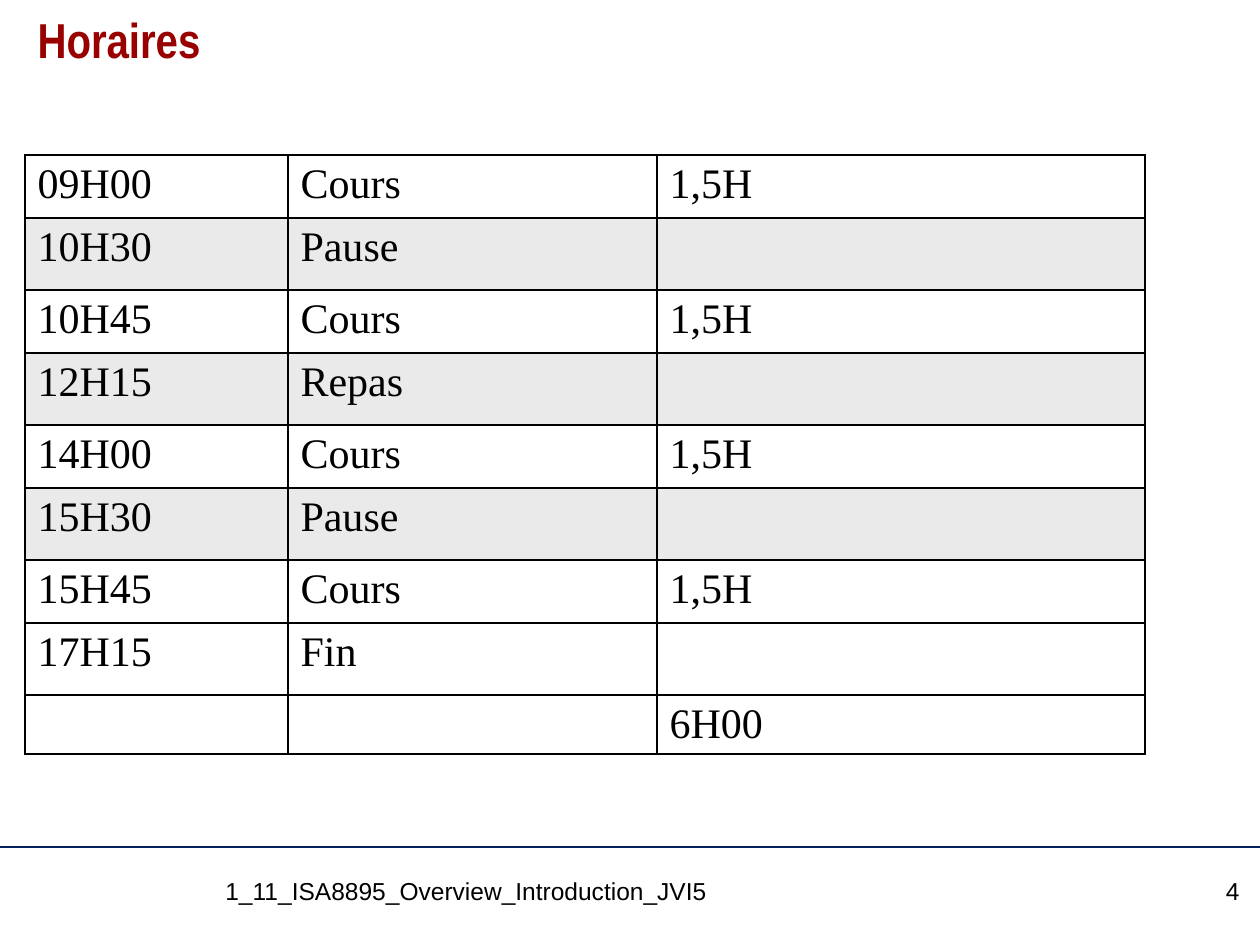
"""Build the course timetable slide."""
from lxml import etree
from pptx import Presentation
from pptx import util as u
from pptx.dml.color import RGBColor
from pptx.enum import shapes, text
from pptx.oxml.ns import qn

BLACK = RGBColor(0x00, 0x00, 0x00)
RED = RGBColor(0x99, 0x00, 0x00)
NAVY = RGBColor(0x00, 0x20, 0x60)
GREY = RGBColor(0xEA, 0xEA, 0xEA)

BREAKS = ("Pause", "Repas")
SCHEDULE = [
    ("09H00", "Cours", "1,5H"),
    ("10H30", "Pause", ""),
    ("10H45", "Cours", "1,5H"),
    ("12H15", "Repas", ""),
    ("14H00", "Cours", "1,5H"),
    ("15H30", "Pause", ""),
    ("15H45", "Cours", "1,5H"),
    ("17H15", "Fin", ""),
    ("", "", "6H00"),
]
COLUMN_WIDTHS = [263, 369, 488]
ROW_HEIGHTS = [63, 72] * 4 + [59]


def px(length):
    """Turn pixels into EMU at 126 pixels to the inch."""
    return u.Emu(round(length * 914400 / 126))


def write(frame, content, font="Arial", size=14, color=BLACK, bold=False,
          align=text.PP_ALIGN.LEFT, spacing=1.0):
    """Write one formatted paragraph into a text frame."""
    paragraph = frame.paragraphs[0]
    paragraph.alignment = align
    paragraph.line_spacing = spacing
    run = paragraph.add_run()
    run.text = content
    run.font.name = font
    run.font.size = u.Pt(size)
    run.font.bold = bold
    run.font.color.rgb = color


class SlideBuilder:
    """Hold the style and the current slide."""

    table_font = "Times New Roman"
    title_font = "Arial Narrow"

    def __init__(self, presentation):
        """Add a slide with a title placeholder."""
        self.slide = presentation.slides.add_slide(presentation.slide_layouts[5])

    def title(self, content, left, top, width, height):
        """Place and fill the title."""
        shape = self.slide.shapes.title
        shape.left, shape.top = px(left), px(top)
        shape.width, shape.height = px(width), px(height)
        frame = shape.text_frame
        frame.auto_size = text.MSO_AUTO_SIZE.NONE
        frame.vertical_anchor = text.MSO_ANCHOR.TOP
        write(frame, content, font=self.title_font, size=28, color=RED,
              bold=True, spacing=0.9)

    def rule(self, left, right, top):
        """Draw a thin horizontal line."""
        line = self.slide.shapes.add_connector(
            shapes.MSO_CONNECTOR.STRAIGHT, px(left), px(top), px(right), px(top))
        line.line.color.rgb = NAVY
        line.line.width = u.Pt(0.75)
        etree.SubElement(line._element.spPr, qn("a:effectLst"))

    def label(self, content, left, top, width, height, **style):
        """Add a text box."""
        box = self.slide.shapes.add_textbox(px(left), px(top), px(width), px(height))
        box.text_frame.word_wrap = True
        write(box.text_frame, content, **style)

    def border(self, cell):
        """Give a cell a black line on each side."""
        properties = cell._tc.get_or_add_tcPr()
        for index, side in enumerate(("lnL", "lnR", "lnT", "lnB")):
            line = etree.Element(qn(f"a:{side}"), w=str(u.Pt(1)))
            fill = etree.SubElement(line, qn("a:solidFill"))
            etree.SubElement(fill, qn("a:srgbClr"), val=str(BLACK))
            properties.insert(index, line)

    def table(self, rows, left, top, widths, heights):
        """Add a bordered table with shaded break rows."""
        table = self.slide.shapes.add_table(
            len(rows), len(widths), px(left), px(top),
            px(sum(widths)), px(sum(heights))).table
        table.first_row = table.horz_banding = False
        for column, width in zip(table.columns, widths):
            column.width = px(width)
        for row, height, values in zip(table.rows, heights, rows):
            row.height = px(height)
            for cell, value in zip(row.cells, values):
                if values[1] in BREAKS:
                    cell.fill.solid()
                    cell.fill.fore_color.rgb = GREY
                else:
                    cell.fill.background()
                self.border(cell)
                if value:
                    write(cell.text_frame, value, font=self.table_font, size=24)


def main():
    """Build and save the presentation."""
    presentation = Presentation()
    presentation.slide_width, presentation.slide_height = px(1260), px(945)
    builder = SlideBuilder(presentation)
    builder.rule(0, 1260, 847)
    builder.title("Horaires", 25, 10, 1211, 105)
    builder.table(SCHEDULE, 25, 155, COLUMN_WIDTHS, ROW_HEIGHTS)
    builder.label("1_11_ISA8895_Overview_Introduction_JVI5", 213, 870, 908, 57)
    builder.label("4", 1136, 870, 116, 57, align=text.PP_ALIGN.RIGHT)
    presentation.save("out.pptx")


if __name__ == "__main__":
    main()
